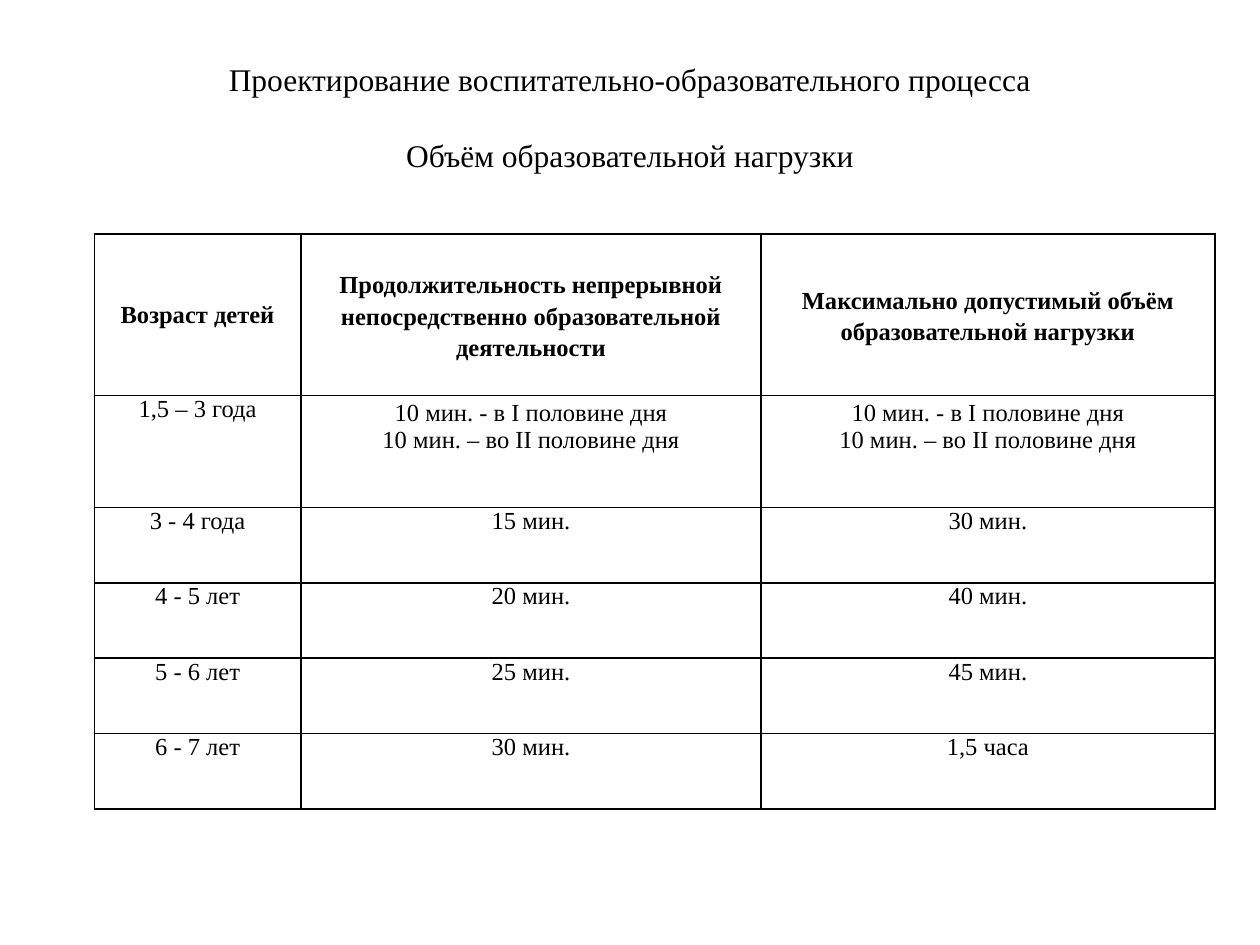
from dataclasses import dataclass

from lxml import etree
from pptx import Presentation
from pptx.dml.color import RGBColor
from pptx.enum.text import MSO_ANCHOR, MSO_AUTO_SIZE, PP_ALIGN
from pptx.oxml.ns import qn
from pptx.util import Cm, Pt

CENTER = PP_ALIGN.CENTER
TOP = MSO_ANCHOR.TOP
MIDDLE = MSO_ANCHOR.MIDDLE
NO_FIT = MSO_AUTO_SIZE.NONE


@dataclass(frozen=True)
class Theme:
    font: str = "Times New Roman"
    ink: str = "000000"
    title_size: float = 18
    table_size: float = 14
    title_gap: float = 22
    border_width: float = 1
    loose_spacing: float = 1.15


class SlideBuilder:
    def __init__(self, deck, theme):
        self.theme = theme
        self.page = deck.slides.add_slide(deck.slide_layouts[5])

    def add_span(self, para, text, size, bold=False):
        para.alignment = CENTER
        span = para.add_run()
        span.text = text
        span.font.name = self.theme.font
        span.font.size = Pt(size)
        span.font.bold = bold
        span.font.color.rgb = RGBColor.from_string(self.theme.ink)

    def add_lines(self, frame, lines, size, bold=False):
        for index, line in enumerate(lines):
            para = frame.add_paragraph() if index else frame.paragraphs[0]
            self.add_span(para, line, size, bold)

    def add_title(self, lines, left, top, width, height):
        box = self.page.shapes.title
        box.left, box.top, box.width, box.height = left, top, width, height
        frame = box.text_frame
        frame.auto_size = NO_FIT
        frame.word_wrap = True
        frame.vertical_anchor = MIDDLE
        self.add_lines(frame, lines, self.theme.title_size)
        for para in frame.paragraphs[1:]:
            para.space_before = Pt(self.theme.title_gap)

    def add_borders(self, cell):
        properties = cell._tc.get_or_add_tcPr()
        for side in ("a:lnL", "a:lnR", "a:lnT", "a:lnB"):
            line = etree.SubElement(properties, qn(side), w=str(Pt(self.theme.border_width)))
            fill = etree.SubElement(line, qn("a:solidFill"))
            etree.SubElement(fill, qn("a:srgbClr"), val=self.theme.ink)

    def fill_cell(self, cell, lines, is_header, is_loose):
        cell.margin_left = cell.margin_right = Cm(0.03)
        cell.margin_top = cell.margin_bottom = 0
        cell.vertical_anchor = MIDDLE if is_header else TOP
        self.add_borders(cell)
        cell.fill.background()
        self.add_lines(cell.text_frame, lines, self.theme.table_size, is_header)
        if is_loose:
            cell.text_frame.paragraphs[0].line_spacing = self.theme.loose_spacing

    def add_table(self, rows, left, top, widths, heights):
        table = self.page.shapes.add_table(
            len(rows), len(widths), left, top, sum(widths), sum(heights)
        ).table
        table.first_row = table.horz_banding = False
        for column, width in zip(table.columns, widths):
            column.width = width
        for row, height in zip(table.rows, heights):
            row.height = height
        for row_index, row in enumerate(rows):
            for column_index, text in enumerate(row):
                is_loose = row_index < 2 and column_index > 0
                self.fill_cell(
                    table.cell(row_index, column_index),
                    text.split("\n"),
                    row_index == 0,
                    is_loose,
                )


def main():
    deck = Presentation()
    deck.slide_width, deck.slide_height = Cm(25.4), Cm(19.05)
    slide = SlideBuilder(deck, Theme())
    slide.add_title(
        ["Проектирование воспитательно-образовательного процесса", "Объём образовательной нагрузки"],
        Cm(1.27), Cm(0.76), Cm(22.86), Cm(3.18),
    )
    half_days = "10 мин. - в I половине дня\n10 мин. – во II половине дня"
    rows = [
        (
            "Возраст детей",
            "Продолжительность непрерывной непосредственно образовательной деятельности",
            "Максимально допустимый объём образовательной нагрузки",
        ),
        ("1,5 – 3 года", half_days, half_days),
        ("3 - 4 года", "15 мин.", "30 мин."),
        ("4 - 5 лет", "20 мин.", "40 мин."),
        ("5 - 6 лет", "25 мин.", "45 мин."),
        ("6 - 7 лет", "30 мин.", "1,5 часа"),
    ]
    widths = [Cm(4.17), Cm(9.27), Cm(9.15)]
    heights = [Cm(3.25), Cm(2.26)] + [Cm(1.52)] * 4
    slide.add_table(rows, Cm(1.9), Cm(4.72), widths, heights)
    deck.save("out.pptx")


if __name__ == "__main__":
    main()
